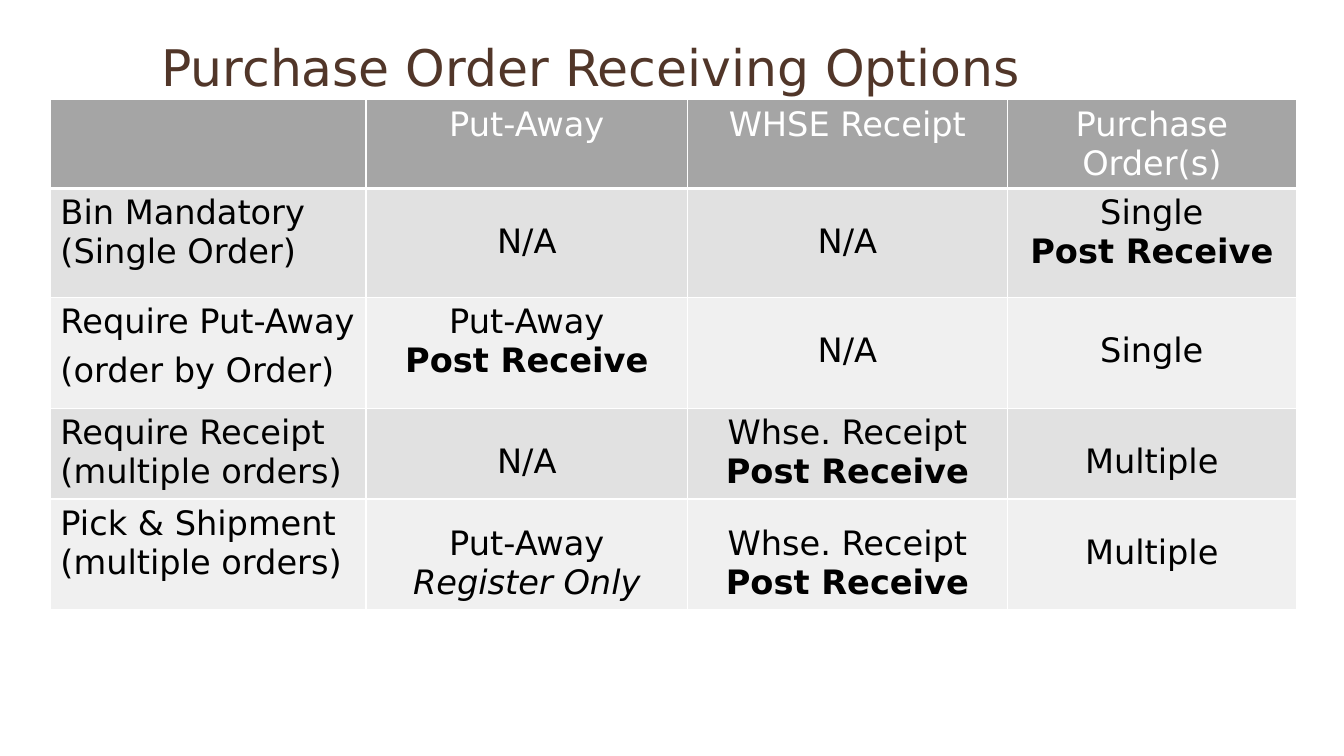
from lxml import etree
from pptx import Presentation
from pptx.dml.color import RGBColor
from pptx.enum import text
from pptx.oxml import ns
from pptx.util import Inches, Pt

FONT = "DejaVu Sans"
BROWN = RGBColor(0x51, 0x36, 0x29)
WHITE = RGBColor(0xFF, 0xFF, 0xFF)
BLACK = RGBColor(0, 0, 0)
HEAD = RGBColor(0xA5, 0xA5, 0xA5)
BANDS = [RGBColor(0xF0, 0xF0, 0xF0), RGBColor(0xE1, 0xE1, 0xE1)]

WIDTHS = [3.13, 3.19, 3.17, 2.87]
HEIGHTS = [0.88, 1.08, 1.1, 0.9, 1.1]
POST = "Post Receive"
REG = "Register Only"
ROWS = [
    [[], ["Put-Away"], ["WHSE Receipt"], ["Purchase Order(s)"]],
    [["Bin Mandatory", "(Single Order)"], ["N/A"], ["N/A"], ["Single", POST]],
    [["Require Put-Away", "(order by Order)"], ["Put-Away", POST], ["N/A"], ["Single"]],
    [["Require Receipt", "(multiple orders)"], ["N/A"], ["Whse. Receipt", POST], ["Multiple"]],
    [["Pick & Shipment", "(multiple orders)"], ["Put-Away", REG], ["Whse. Receipt", POST],
     ["Multiple"]],
]


def add_run(para, words, size, color):
    run = para.add_run()
    run.text = words
    font = run.font
    font.name = FONT
    font.size = Pt(size)
    font.color.rgb = color
    font.bold = words == POST
    font.italic = words == REG


def set_title(slide, words):
    title = slide.shapes.title
    title.left, title.top = Inches(0.5), Inches(0.4)
    title.width, title.height = Inches(12.12), Inches(0.6)
    frame = title.text_frame
    frame.auto_size = text.MSO_AUTO_SIZE.NONE
    frame.vertical_anchor = text.MSO_ANCHOR.MIDDLE
    frame.margin_left = Inches(1.1)
    para = frame.paragraphs[0]
    para.alignment = text.PP_ALIGN.LEFT
    para.line_spacing = 0.9
    add_run(para, words, 36, BROWN)


def set_edges(cell, base):
    """Draw white cell borders, the bottom one base points wide."""
    props = cell._tc.get_or_add_tcPr()
    for side, width in zip("LRTB", [1, 1, 1, base]):
        line = etree.SubElement(props, ns.qn("a:ln" + side), w=str(Pt(width)))
        fill = etree.SubElement(line, ns.qn("a:solidFill"))
        etree.SubElement(fill, ns.qn("a:srgbClr"), val=str(WHITE))


def top_inset(row, col, lines):
    """Lower the short entries of the body, and those of the last row."""
    if row == 0 or col == 0:
        return 0.05
    if len(lines) == 1:
        return 0.34
    return 0.25 if row == len(ROWS) - 1 else 0.05


def fill_cell(cell, row, col, lines):
    set_edges(cell, 3 if row == 0 else 1)
    cell.fill.solid()
    cell.fill.fore_color.rgb = BANDS[row % 2] if row else HEAD
    cell.margin_left = cell.margin_right = Inches(0.1)
    cell.margin_top = Inches(top_inset(row, col, lines))
    cell.margin_bottom = Inches(0.05)
    frame = cell.text_frame
    for i, words in enumerate(lines):
        para = frame.add_paragraph() if i else frame.paragraphs[0]
        para.alignment = text.PP_ALIGN.CENTER if col else text.PP_ALIGN.LEFT
        if words == "(order by Order)":
            para.space_before = Pt(7)
        add_run(para, words, 24, BLACK if row else WHITE)


def add_grid(slide):
    frame = slide.shapes.add_table(
        len(ROWS), len(WIDTHS), Inches(0.5), Inches(0.99),
        Inches(sum(WIDTHS)), Inches(sum(HEIGHTS)))
    table = frame.table
    table.horz_banding = False
    for col, width in zip(table.columns, WIDTHS):
        col.width = Inches(width)
    for row, height in zip(table.rows, HEIGHTS):
        row.height = Inches(height)
    for r, cells in enumerate(ROWS):
        for c, lines in enumerate(cells):
            fill_cell(table.cell(r, c), r, c, lines)


def main():
    deck = Presentation()
    deck.slide_width, deck.slide_height = Inches(13.33), Inches(7.5)
    slide = deck.slides.add_slide(deck.slide_layouts[5])
    set_title(slide, "Purchase Order Receiving Options")
    add_grid(slide)
    deck.save("out.pptx")


if __name__ == "__main__":
    main()
